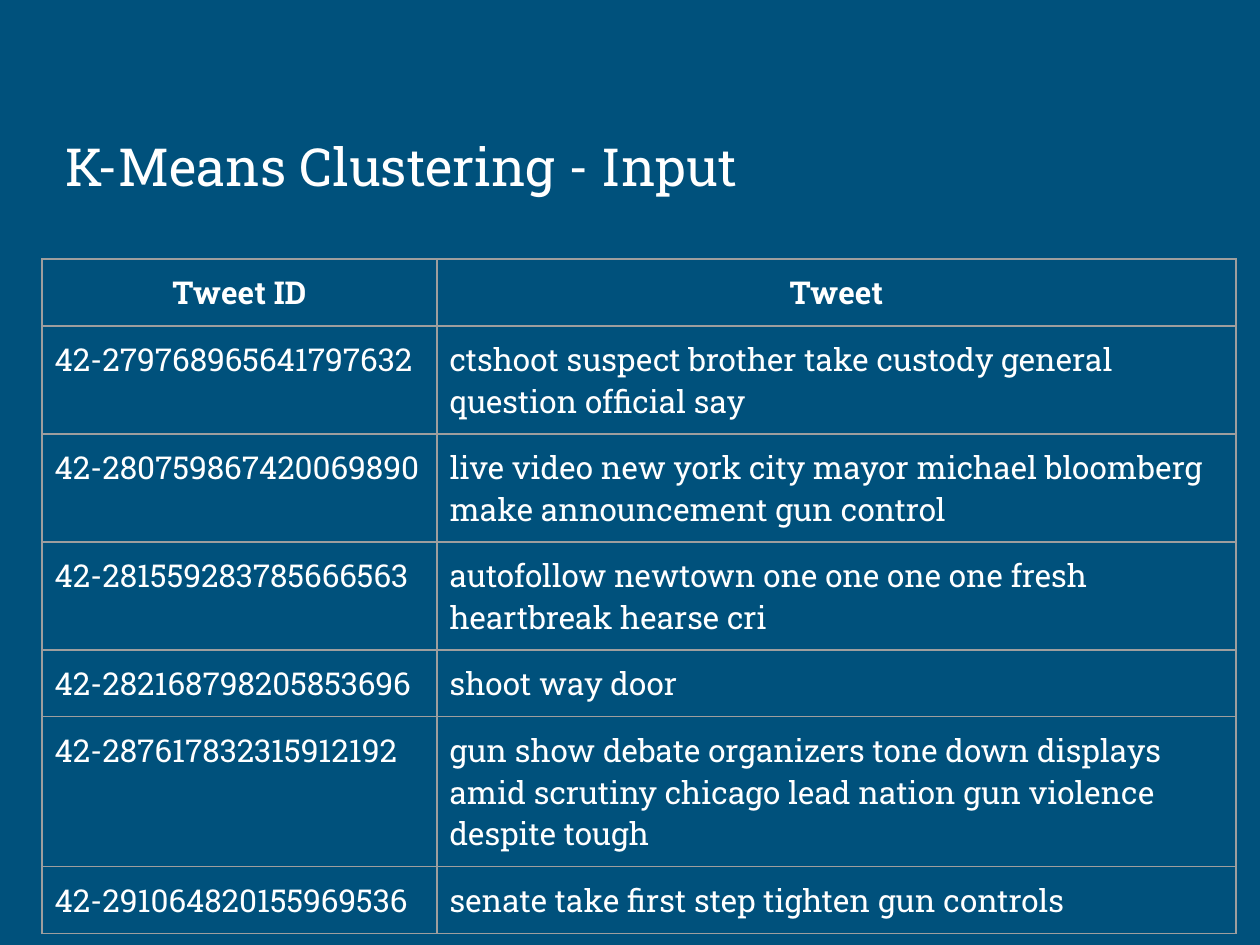
from lxml import etree
from pptx import Presentation
from pptx import util as u
from pptx.dml.color import RGBColor
from pptx.enum import text
from pptx.oxml.ns import qn

PX = 914400 / 126
FONT = "Roboto Slab"
COLORS = {"background": "00517C", "text": "FFFFFF", "border": "9E9E9E"}
INSET = u.Inches(0.1)

COLUMN_WIDTHS = (395, 799)
HEIGHT_BY_LINES = {1: 67, 2: 108, 3: 150}
# Line count, tweet ID, tweet
ROWS = [
    (1, "Tweet ID", "Tweet"),
    (2, "42-279768965641797632",
     "ctshoot suspect brother take custody general question official say"),
    (2, "42-280759867420069890",
     "live video new york city mayor michael bloomberg make announcement gun control"),
    (2, "42-281559283785666563",
     "autofollow newtown one one one one fresh heartbreak hearse cri"),
    (1, "42-282168798205853696", "shoot way door"),
    (3, "42-287617832315912192",
     "gun show debate organizers tone down displays amid scrutiny chicago "
     "lead nation gun violence despite tough"),
    (1, "42-291064820155969536", "senate take first step tighten gun controls"),
]


def px(length):
    return u.Emu(round(length * PX))


def rgb(name):
    return RGBColor.from_string(COLORS[name])


def set_margins(target):
    for side in ("left", "top", "right", "bottom"):
        setattr(target, f"margin_{side}", INSET)


def write(paragraph, words, **formats):
    run = paragraph.add_run()
    run.text = words
    for name, value in {"name": FONT, **formats}.items():
        setattr(run.font, name, value)
    run.font.color.rgb = rgb("text")


def add_borders(cell):
    properties = cell._tc.get_or_add_tcPr()
    for index, side in enumerate(("lnL", "lnR", "lnT", "lnB")):
        line = etree.Element(qn(f"a:{side}"), w=str(u.Pt(0.75)))
        fill = etree.SubElement(line, qn("a:solidFill"))
        etree.SubElement(fill, qn("a:srgbClr"), val=COLORS["border"])
        properties.insert(index, line)


def add_title(slide, left, top, width, height):
    box = slide.shapes.add_textbox(px(left), px(top), px(width), px(height))
    frame = box.text_frame
    frame.word_wrap = True
    frame.vertical_anchor = text.MSO_ANCHOR.BOTTOM
    set_margins(frame)
    write(frame.paragraphs[0], "K-Means Clustering - Input", size=u.Pt(30))


def add_tweet_table(slide, left, top):
    heights = [HEIGHT_BY_LINES[lines] for lines, *_ in ROWS]
    shape = slide.shapes.add_table(
        len(ROWS), len(COLUMN_WIDTHS), px(left), px(top),
        px(sum(COLUMN_WIDTHS)), px(sum(heights)))
    table = shape.table
    table.first_row = table.horz_banding = False
    for column, width in zip(table.columns, COLUMN_WIDTHS):
        column.width = px(width)

    for row_index, (_, *values) in enumerate(ROWS):
        table.rows[row_index].height = px(heights[row_index])
        is_header = row_index == 0
        for column_index, words in enumerate(values):
            cell = table.cell(row_index, column_index)
            cell.fill.background()
            set_margins(cell)
            add_borders(cell)
            paragraph = cell.text_frame.paragraphs[0]
            if is_header:
                paragraph.alignment = text.PP_ALIGN.CENTER
            write(paragraph, words, size=u.Pt(18), bold=is_header)


def main():
    presentation = Presentation()
    presentation.slide_width, presentation.slide_height = px(1260), px(945)
    slide = presentation.slides.add_slide(presentation.slide_layouts[6])

    # Background
    fill = slide.background.fill
    fill.solid()
    fill.fore_color.rgb = rgb("background")

    # Title and table
    add_title(slide, 53, 84, 1153, 126)
    add_tweet_table(slide, 42, 259)
    presentation.save("out.pptx")


if __name__ == "__main__":
    main()
